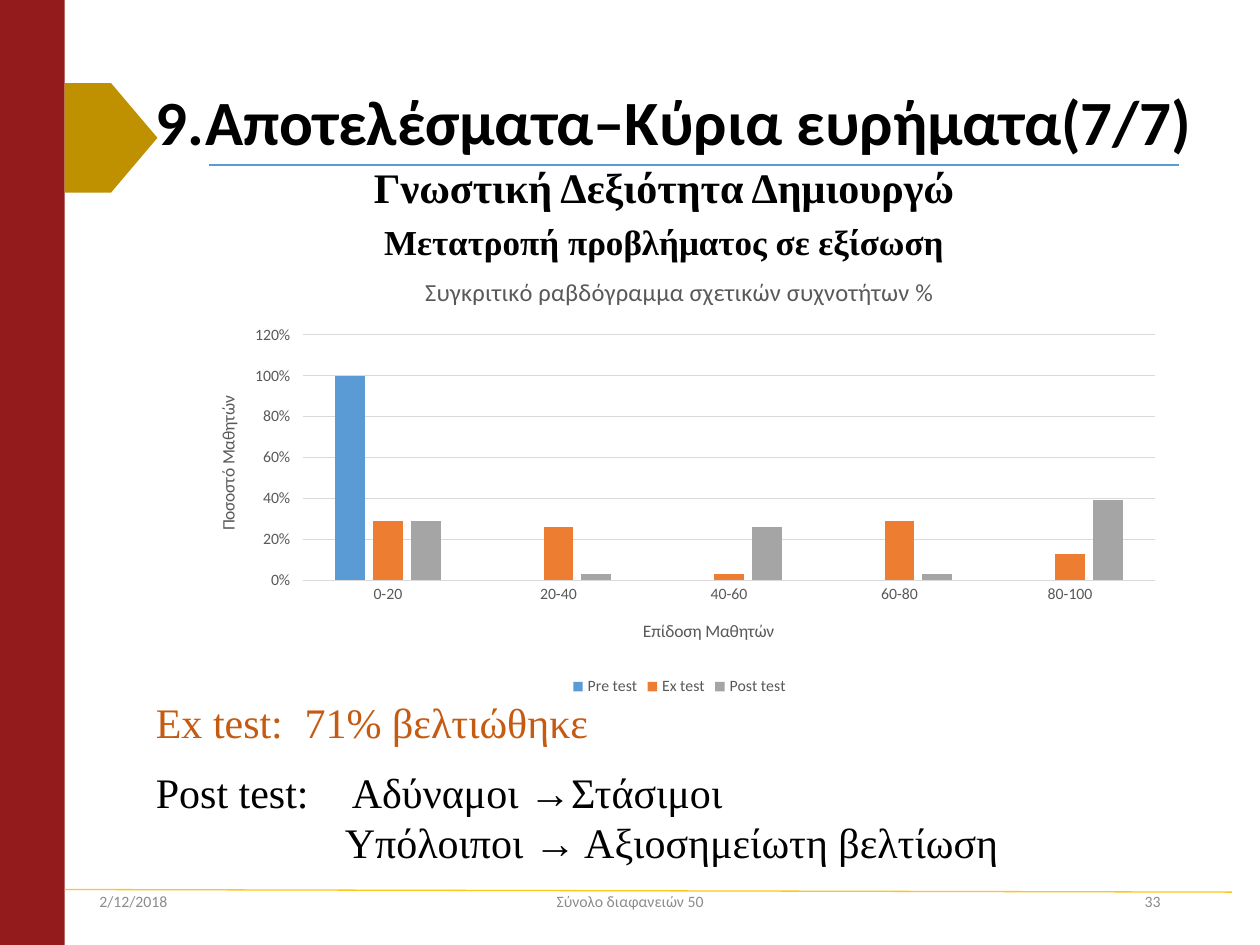
from lxml import etree
from pptx import Presentation
from pptx.chart.data import CategoryChartData
from pptx.dml.color import RGBColor
from pptx.enum.chart import XL_CHART_TYPE, XL_LEGEND_POSITION, XL_TICK_MARK
from pptx.enum.shapes import MSO_CONNECTOR, MSO_SHAPE
from pptx.enum.text import MSO_ANCHOR, PP_ALIGN
from pptx.oxml.ns import qn
from pptx.util import Pt

COLUMNS = XL_CHART_TYPE.COLUMN_CLUSTERED
LEGEND_BOTTOM = XL_LEGEND_POSITION.BOTTOM
TICK_NONE, TICK_OUT = XL_TICK_MARK.NONE, XL_TICK_MARK.OUTSIDE
STRAIGHT = MSO_CONNECTOR.STRAIGHT
RECTANGLE, PENTAGON = MSO_SHAPE.RECTANGLE, MSO_SHAPE.PENTAGON
TOP, MIDDLE = MSO_ANCHOR.TOP, MSO_ANCHOR.MIDDLE
LEFT, CENTER, RIGHT = PP_ALIGN.LEFT, PP_ALIGN.CENTER, PP_ALIGN.RIGHT

SANS, SERIF = "Calibri", "Times New Roman"
BLACK, GRAY, FOOTER_GRAY, GRID_GRAY = "000000", "595959", "8C8C8C", "D9D9D9"
BLUE, ORANGE, DARK_ORANGE = "5B9BD5", "ED7D31", "C55A11"

BANDS = ["0-20", "20-40", "40-60", "60-80", "80-100"]
RESULTS = [
    ("Pre test", BLUE, [1, None, None, None, None]),
    ("Ex test", ORANGE, [0.29, 0.26, 0.03, 0.29, 0.13]),
    ("Post test", "A5A5A5", [0.29, 0.03, 0.26, 0.03, 0.39]),
]


def rgb(color):
    return RGBColor.from_string(color)


def style(font, size, color, name=SANS, bold=False):
    font.size, font.name, font.bold = Pt(size), name, bold
    font.color.rgb = rgb(color)


def add_block(slide, kind, box, color):
    block = slide.shapes.add_shape(kind, *map(Pt, box))
    block.shadow.inherit = False
    block.fill.solid()
    block.fill.fore_color.rgb = rgb(color)
    block.line.fill.background()


def add_rule(slide, ends, color):
    rule = slide.shapes.add_connector(STRAIGHT, *map(Pt, ends))
    rule.line.color.rgb = rgb(color)
    rule.line.width = Pt(0.75)
    etree.SubElement(rule._element.spPr, qn("a:effectLst"))


def add_text(slide, box, lines, size, color=BLACK, name=SERIF, bold=False,
             align=LEFT, anchor=TOP, spacing=1.0):
    """Each line is a pair: its text and the hanging indent before a tab."""
    frame = slide.shapes.add_textbox(*map(Pt, box)).text_frame
    frame.word_wrap = True
    frame.vertical_anchor = anchor
    for index, (text, margin) in enumerate(lines):
        paragraph = frame.add_paragraph() if index else frame.paragraphs[0]
        paragraph.text = text
        paragraph.alignment = align
        paragraph.line_spacing = spacing
        if margin:
            properties = paragraph._p.get_or_add_pPr()
            properties.set("marL", str(Pt(margin)))
            properties.set("indent", str(Pt(-margin if "\t" in text else 0)))
        for run in paragraph.runs:
            style(run.font, size, color, name, bold)


def place(element, **fractions):
    """Give a chart part a fixed place, as fractions of the chart."""
    layout = element.find(qn("c:layout"))
    if layout is None:
        layout = etree.Element(qn("c:layout"))
        text = element.find(qn("c:tx"))
        element.insert(0 if text is None else 1, layout)
    manual = etree.SubElement(layout, qn("c:manualLayout"))
    if "w" in fractions:
        etree.SubElement(manual, qn("c:layoutTarget")).set("val", "inner")
    for side in ("x", "y"):
        etree.SubElement(manual, qn(f"c:{side}Mode")).set("val", "edge")
    for key, value in fractions.items():
        etree.SubElement(manual, qn(f"c:{key}")).set("val", str(value))


def set_title(title, text, size):
    title.text_frame.text = text
    style(title.text_frame.paragraphs[0].runs[0].font, size, GRAY)


def format_axis(axis, title, tick, x, y):
    set_title(axis.axis_title, title, 10)
    place(axis.axis_title._element, x=x, y=y)
    axis.major_tick_mark, axis.minor_tick_mark = tick, TICK_NONE
    style(axis.tick_labels.font, 9, GRAY)


def add_results_chart(slide, box):
    data = CategoryChartData(number_format="0%")
    data.categories = BANDS
    for name, _, values in RESULTS:
        data.add_series(name, values)
    chart = slide.shapes.add_chart(COLUMNS, *map(Pt, box), data).chart
    style(chart.font, 10, BLACK)
    set_title(chart.chart_title, "Συγκριτικό ραβδόγραμμα σχετικών συχνοτήτων %", 14)
    chart.chart_title.include_in_layout = False
    place(chart._chartSpace.chart.plotArea, x=0.12, y=0.18, w=0.86, h=0.55)

    # Columns
    plot = chart.plots[0]
    plot.gap_width, plot.overlap = 219, -27
    plot.vary_by_categories = False
    for series, (_, color, _) in zip(plot.series, RESULTS):
        series.format.fill.solid()
        series.format.fill.fore_color.rgb = rgb(color)

    # Axes
    bands, share = chart.category_axis, chart.value_axis
    format_axis(bands, "Επίδοση Μαθητών", TICK_NONE, 0.46, 0.81)
    format_axis(share, "Ποσοστό Μαθητών", TICK_OUT, 0.03, 0.31)
    share.minimum_scale, share.maximum_scale, share.major_unit = 0, 1.2, 0.2
    share.tick_labels.number_format = "0%"
    share.tick_labels.number_format_is_linked = False
    share.format.line.fill.background()
    for line in (bands.format.line, share.major_gridlines.format.line):
        line.color.rgb = rgb(GRID_GRAY)
        line.width = Pt(0.75)

    # Legend
    chart.has_legend = True
    chart.legend.position = LEGEND_BOTTOM
    chart.legend.include_in_layout = False
    style(chart.legend.font, 9, GRAY)


def main():
    deck = Presentation()
    deck.slide_width, deck.slide_height = Pt(720), Pt(540)
    slide = deck.slides.add_slide(deck.slide_layouts[6])

    # Side band, title marker and rules
    add_block(slide, RECTANGLE, (0, 0, 37, 540), "931B1B")
    add_block(slide, PENTAGON, (37, 47.5, 53, 62.5), "BF9000")
    add_rule(slide, (119.5, 94.3, 674, 94.3), BLUE)
    add_rule(slide, (37, 508.3, 704, 509.8), "FFC61A")

    # Headings
    add_text(slide, (82, 49, 612, 45.4), [("9.Αποτελέσματα–Κύρια ευρήματα(7/7)", 0)],
             36, name=SANS, bold=True, anchor=MIDDLE, spacing=0.9)
    add_text(slide, (206.6, 88.6, 357, 36), [("Γνωστική Δεξιότητα Δημιουργώ", 0)],
             24, bold=True)
    add_text(slide, (212.4, 122.4, 340, 31.7),
             [("Μετατροπή προβλήματος σε εξίσωση", 0)], 20, bold=True)

    add_results_chart(slide, (105, 145.5, 566.6, 255))

    # Findings
    add_text(slide, (82, 394.6, 346, 36), [("Ex test:\t71% βελτιώθηκε", 85)],
             24, DARK_ORANGE)
    add_text(slide, (82, 434.2, 606, 65.5),
             [("Post test:\tΑδύναμοι →Στάσιμοι", 112),
              ("Υπόλοιποι → Αξιοσημείωτη βελτίωση", 108)], 24)

    # Footer
    for left, width, text, align in ((49.7, 162, "2/12/2018", LEFT),
                                     (238.3, 243.4, "Σύνολο διαφανειών 50", CENTER),
                                     (508.3, 162, "33", RIGHT)):
        add_text(slide, (left, 500.4, width, 28.8), [(text, 0)], 9, FOOTER_GRAY,
                 SANS, align=align, anchor=MIDDLE)

    deck.save("out.pptx")


if __name__ == "__main__":
    main()
